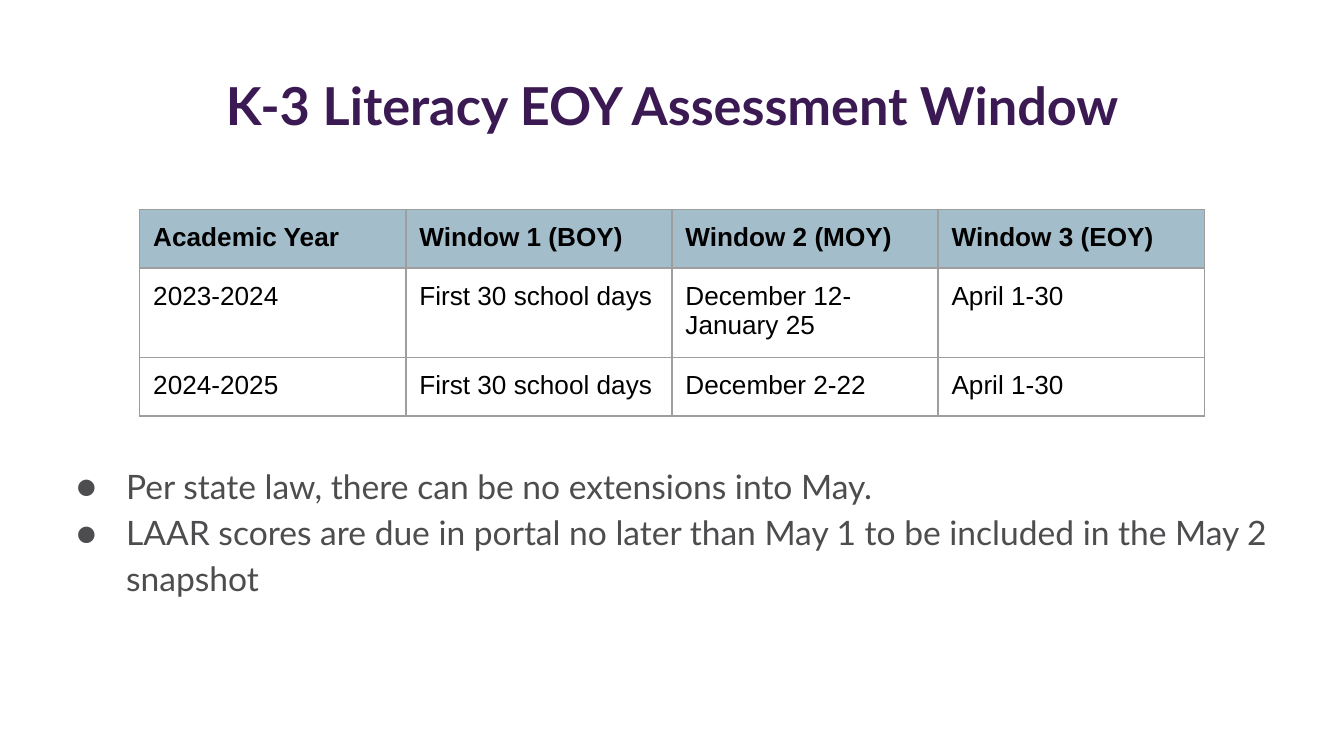
from dataclasses import dataclass
from typing import Any, Optional

import pptx
import pptx.dml.color
import pptx.enum.text
import pptx.oxml.ns
import pptx.util
from lxml import etree

Inches = pptx.util.Inches
Pt = pptx.util.Pt
RGBColor = pptx.dml.color.RGBColor

PURPLE = RGBColor(0x3B, 0x1A, 0x53)
GREY = RGBColor(0x4D, 0x4D, 0x4F)
BLACK = RGBColor(0x00, 0x00, 0x00)
HEADER_BLUE = RGBColor(0xA3, 0xBD, 0xCB)
BORDER_GREY = RGBColor(0x9E, 0x9E, 0x9E)

SLIDE_WIDTH = Inches(10)
SLIDE_HEIGHT = SLIDE_WIDTH * 9 // 16
MARGIN = Inches(0.1)
COLUMN_WIDTH = Inches(1.98)
ROW_HEIGHT = Inches(0.42)
TABLE_HEIGHT = Inches(1.53)


@dataclass(frozen=True)
class TextStyle:
    font: dict[str, Any]
    color: RGBColor


@dataclass(frozen=True)
class TableRow:
    cells: tuple[str, ...]
    style: TextStyle
    fill: Optional[RGBColor] = None


TITLE_STYLE = TextStyle({"name": "Lato", "size": Pt(28), "bold": True}, PURPLE)
BULLET_STYLE = TextStyle({"name": "Lato", "size": Pt(18), "bold": False}, GREY)
HEADER_STYLE = TextStyle({"name": "Arial", "size": Pt(14), "bold": True}, BLACK)
CELL_STYLE = TextStyle({"name": "Arial", "size": Pt(14), "bold": False}, BLACK)

ROWS = (
    TableRow(("Academic Year", "Window 1 (BOY)", "Window 2 (MOY)", "Window 3 (EOY)"),
             HEADER_STYLE, HEADER_BLUE),
    TableRow(("2023-2024", "First 30 school days", "December 12-January 25", "April 1-30"),
             CELL_STYLE),
    TableRow(("2024-2025", "First 30 school days", "December 2-22", "April 1-30"),
             CELL_STYLE),
)
BULLETS = (
    "Per state law, there can be no extensions into May.",
    "LAAR scores are due in portal no later than May 1 to be included in the May 2 snapshot",
)


def set_attributes(target: Any, values: dict[str, Any]) -> None:
    for name, value in values.items():
        setattr(target, name, value)


def set_margins(target: Any) -> None:
    sides = ("left", "top", "right", "bottom")
    set_attributes(target, {f"margin_{side}": MARGIN for side in sides})


def write_text(paragraph: Any, text: str, style: TextStyle) -> None:
    run = paragraph.add_run()
    run.text = text
    set_attributes(run.font, style.font)
    run.font.color.rgb = style.color


def add_element(parent: Any, tag: str, **attributes: str) -> Any:
    return etree.SubElement(parent, pptx.oxml.ns.qn(tag), attributes)


def add_title(slide: Any, text: str) -> None:
    title = slide.shapes.title
    set_attributes(title, {"left": Inches(0.34), "top": Inches(0.49),
                           "width": Inches(9.32), "height": Inches(0.63)})
    frame = title.text_frame
    set_margins(frame)
    set_attributes(frame, {"word_wrap": True,
                           "auto_size": pptx.enum.text.MSO_AUTO_SIZE.NONE,
                           "vertical_anchor": pptx.enum.text.MSO_ANCHOR.MIDDLE})
    paragraph = frame.paragraphs[0]
    set_attributes(paragraph, {"alignment": pptx.enum.text.PP_ALIGN.CENTER,
                               "line_spacing": 0.9})
    write_text(paragraph, text, TITLE_STYLE)


def add_borders(cell: Any) -> None:
    """Outline a cell; call before filling it, as borders come first in the XML."""
    properties = cell._tc.get_or_add_tcPr()
    for tag in ("a:lnL", "a:lnR", "a:lnT", "a:lnB"):
        line = add_element(properties, tag, w=str(Pt(0.75)))
        fill = add_element(line, "a:solidFill")
        add_element(fill, "a:srgbClr", val=str(BORDER_GREY))


def add_window_table(slide: Any, rows: tuple[TableRow, ...]) -> None:
    column_count = len(rows[0].cells)
    frame = slide.shapes.add_table(
        len(rows), column_count, Inches(1.04), Inches(1.56),
        COLUMN_WIDTH * column_count, ROW_HEIGHT * len(rows))
    # The frame leaves room for the row that wraps onto a second line.
    frame.height = TABLE_HEIGHT
    table = frame.table
    set_attributes(table, {"first_row": False, "horz_banding": False})
    for row_index, row in enumerate(rows):
        for column_index, text in enumerate(row.cells):
            cell = table.cell(row_index, column_index)
            set_margins(cell)
            add_borders(cell)
            if row.fill is None:
                cell.fill.background()
            else:
                cell.fill.solid()
                cell.fill.fore_color.rgb = row.fill
            write_text(cell.text_frame.paragraphs[0], text, row.style)


def add_bullets(slide: Any, texts: tuple[str, ...]) -> None:
    box = slide.shapes.add_textbox(Inches(0.34), Inches(3.32), Inches(9.32), Inches(1.37))
    frame = box.text_frame
    frame.word_wrap = True
    set_margins(frame)
    for index, text in enumerate(texts):
        paragraph = frame.paragraphs[0] if index == 0 else frame.add_paragraph()
        paragraph.line_spacing = 1.15
        properties = paragraph._p.get_or_add_pPr()
        properties.set("marL", str(Inches(0.5)))
        properties.set("indent", str(Inches(-0.37)))
        bullet_color = add_element(properties, "a:buClr")
        add_element(bullet_color, "a:srgbClr", val=str(GREY))
        add_element(properties, "a:buFont", typeface="Lato")
        add_element(properties, "a:buChar", char="●")
        write_text(paragraph, text, BULLET_STYLE)


def main() -> None:
    presentation = pptx.Presentation()
    set_attributes(presentation, {"slide_width": SLIDE_WIDTH, "slide_height": SLIDE_HEIGHT})
    slide = presentation.slides.add_slide(presentation.slide_layouts[5])
    add_title(slide, "K-3 Literacy EOY Assessment Window")
    add_bullets(slide, BULLETS)
    add_window_table(slide, ROWS)
    presentation.save("out.pptx")


if __name__ == "__main__":
    main()
